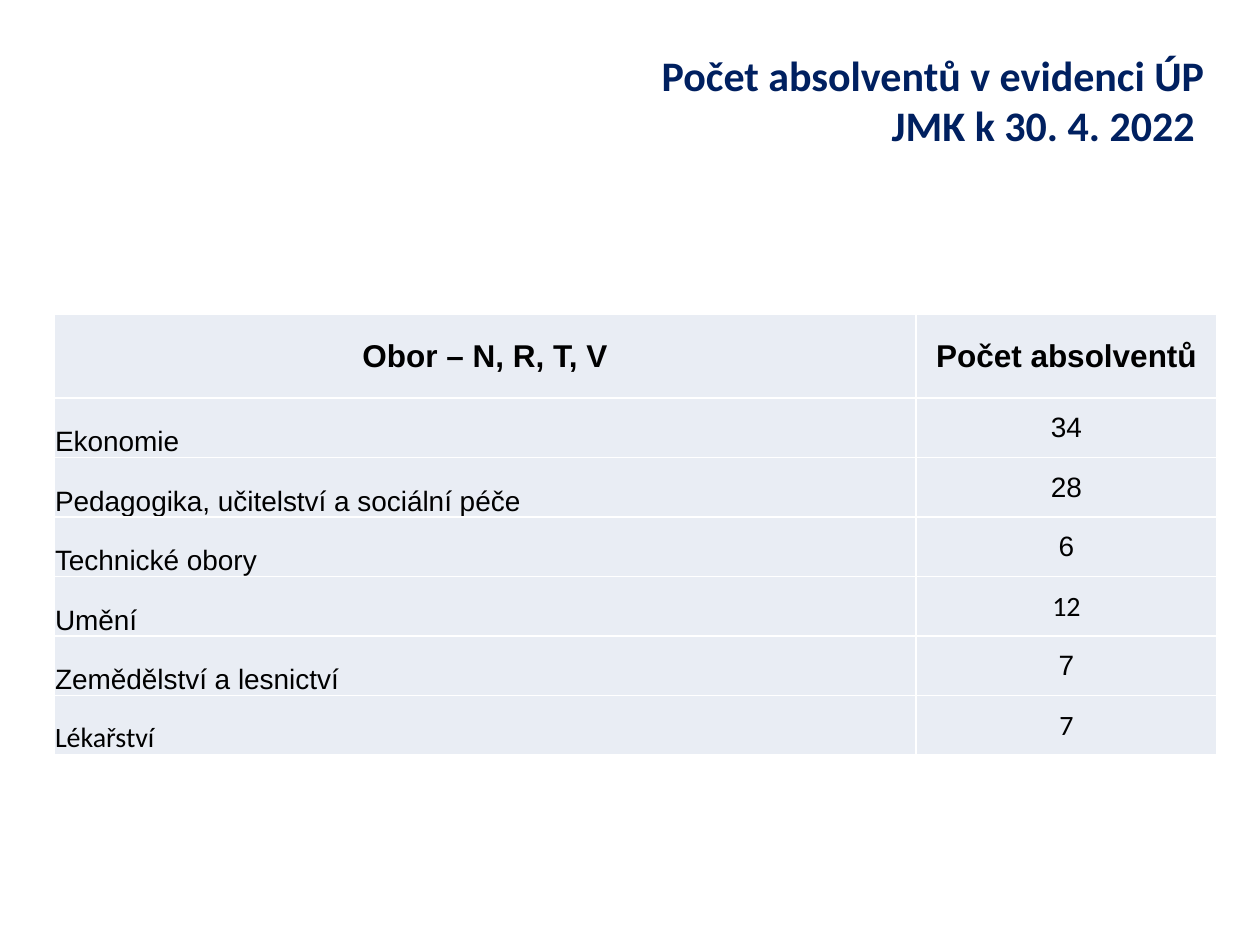
"""Build a slide with a table of graduates by field of study."""
from dataclasses import dataclass

from lxml.etree import SubElement
from pptx import Presentation
from pptx.dml.color import RGBColor as Rgb
from pptx.enum.text import MSO_ANCHOR as Anchor, PP_ALIGN as Align
from pptx.oxml.ns import qn
from pptx.util import Pt


@dataclass(frozen=True)
class Theme:
    """Colours, fonts and type sizes of the slide."""
    navy: str = "002060"
    ink: str = "000000"
    cell: str = "E9EDF4"
    rule: str = "FFFFFF"
    sans: str = "Arial"
    alt: str = "Calibri"
    title: int = 24
    head: int = 18
    body: int = 16


THEME = Theme()
SCALE = 914400 / 126
TITLE = "Počet absolventů v evidenci ÚP\vJMK k 30. 4. 2022 "
HEADS = ["Obor – N, R, T, V", "Počet absolventů"]
ROWS = [
    ("Ekonomie", "34"),
    ("Pedagogika, učitelství a sociální péče", "28"),
    ("Technické obory", "6"),
    ("Umění", "12"),
    ("Zemědělství a lesnictví", "7"),
    ("Lékařství", "7"),
]
ALT_CELLS = {(4, 1), (6, 0), (6, 1)}


def px(num):
    """Turn pixels into EMU."""
    return round(num * SCALE)


def style(frame, size, face, color, bold, align):
    """Format all text in a frame."""
    for par in frame.paragraphs:
        par.alignment = align
        for run in par.runs:
            font = run.font
            font.size, font.name, font.bold = Pt(size), face, bold
            font.color.rgb = Rgb.from_string(color)


def add_title(slide):
    """Place and fill the title."""
    shape = slide.shapes.title
    shape.left, shape.top, shape.width, shape.height = map(px, (305, 43, 912, 159))
    frame = shape.text_frame
    frame.text = TITLE
    frame.word_wrap = True
    frame.vertical_anchor = Anchor.TOP
    style(frame, THEME.title, THEME.alt, THEME.navy, True, Align.RIGHT)


def add_rules(cell):
    """Draw a thin rule on each side of a cell."""
    props = cell._tc.get_or_add_tcPr()
    for side in ("lnL", "lnR", "lnT", "lnB"):
        line = SubElement(props, qn(f"a:{side}"), w=str(Pt(1)))
        fill = SubElement(line, qn("a:solidFill"))
        SubElement(fill, qn("a:srgbClr"), val=THEME.rule)


def fill_cell(cell, text, row, col):
    """Write and format one cell."""
    head = row == 0
    label = col == 0 and not head
    add_rules(cell)
    cell.fill.solid()
    cell.fill.fore_color.rgb = Rgb.from_string(THEME.cell)
    cell.margin_left = cell.margin_right = cell.margin_top = px(1)
    cell.margin_bottom = 0
    cell.vertical_anchor = Anchor.BOTTOM if label else Anchor.MIDDLE
    cell.text_frame.text = text
    style(cell.text_frame, THEME.head if head else THEME.body,
          THEME.alt if (row, col) in ALT_CELLS else THEME.sans,
          THEME.ink, head, Align.LEFT if label else Align.CENTER)


def add_grid(slide):
    """Add the table of fields and counts."""
    wide, high, top = (862, 301), 441, 84
    data = [HEADS, *ROWS]
    table = slide.shapes.add_table(len(data), len(wide), px(54), px(314),
                                   px(sum(wide)), px(high)).table
    table.first_row = table.horz_banding = False
    for col, width in zip(table.columns, wide):
        col.width = px(width)
    for row, line in enumerate(data):
        table.rows[row].height = px((high - top) / len(ROWS) if row else top)
        for col, text in enumerate(line):
            fill_cell(table.cell(row, col), text, row, col)


def main():
    """Build and save the slide."""
    deck = Presentation()
    deck.slide_width, deck.slide_height = px(1260), px(945)
    slide = deck.slides.add_slide(deck.slide_layouts[5])
    add_title(slide)
    add_grid(slide)
    deck.save("out.pptx")


if __name__ == "__main__":
    main()
